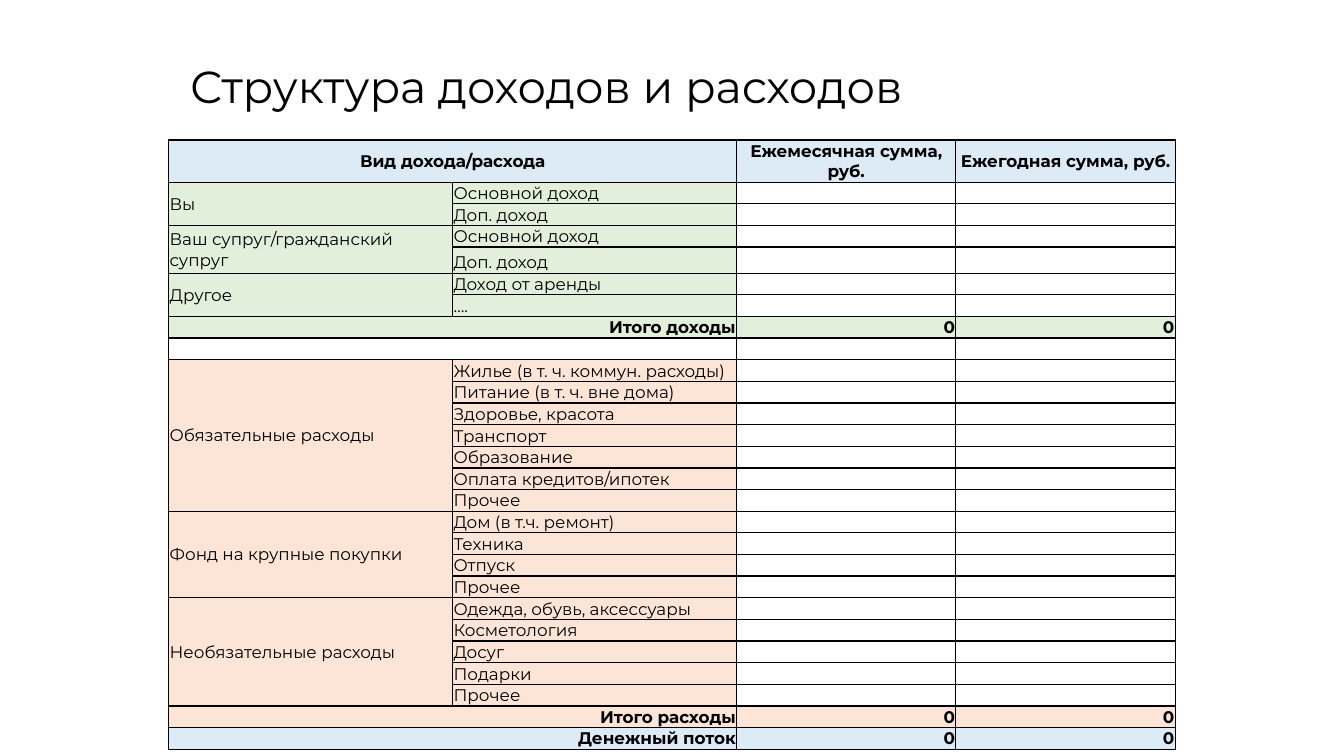
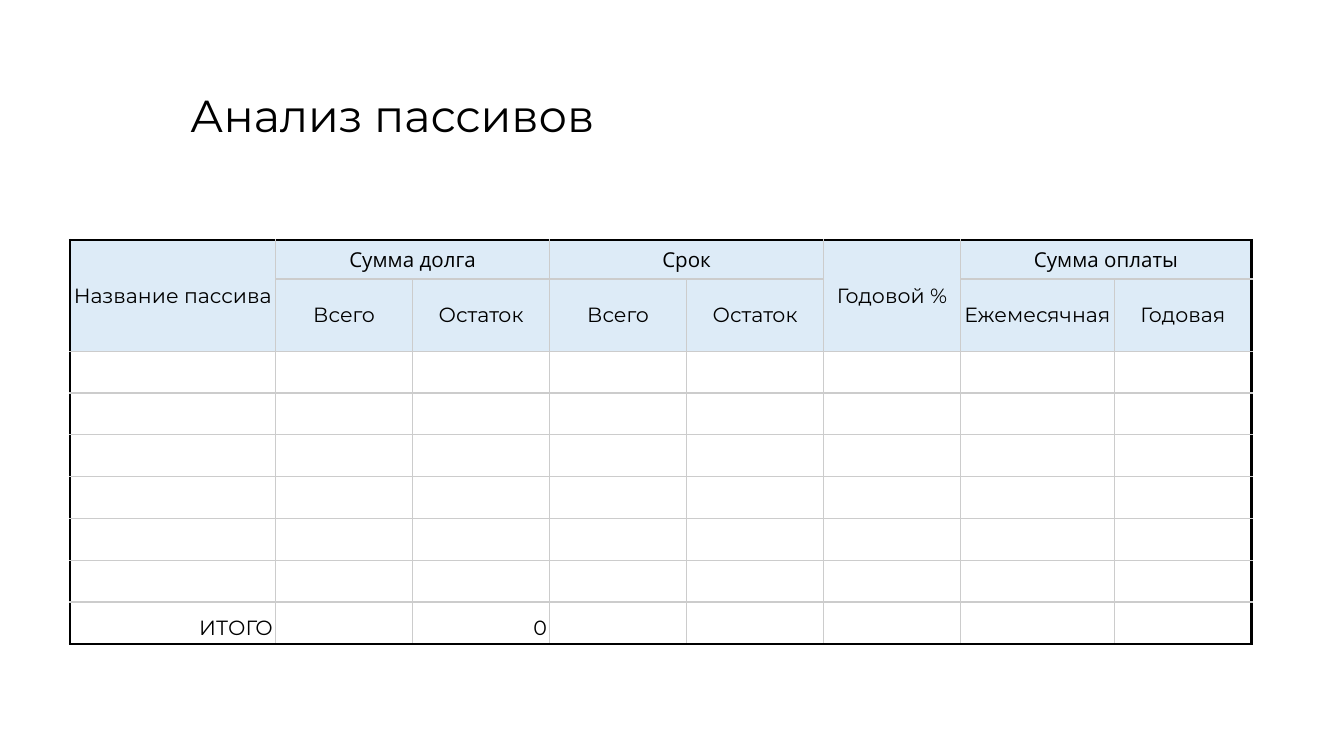
"""Build two slides with tables for household income, expenses and liabilities."""
import dataclasses
import itertools

import lxml.etree
import pptx
import pptx.dml.color
import pptx.enum.text
import pptx.oxml.ns
import pptx.slide
import pptx.table
import pptx.text.text
import pptx.util

Pt = pptx.util.Pt
qn = pptx.oxml.ns.qn
Align = pptx.enum.text.PP_ALIGN
Anchor = pptx.enum.text.MSO_ANCHOR

COLORS = {
    "text": "000000",
    "frame": "000000",
    "grid": "CCCCCC",
    "header": "DDEBF7",
    "income": "E2EFDA",
    "expense": "FCE4D6",
}
FONT = "Montserrat"
HEADER_FONT = "Open Sans"

INCOME = {
    "Вы": ["Основной доход", "Доп. доход"],
    "Ваш супруг/гражданский супруг": ["Основной доход", "Доп. доход"],
    "Другое": ["Доход от аренды", "…."],
}
EXPENSES = {
    "Обязательные расходы": [
        "Жилье (в т. ч. коммун. расходы)", "Питание (в т. ч. вне дома)",
        "Здоровье, красота", "Транспорт", "Образование",
        "Оплата кредитов/ипотек", "Прочее",
    ],
    "Фонд на крупные покупки": ["Дом (в т.ч. ремонт)", "Техника", "Отпуск", "Прочее"],
    "Необязательные расходы": [
        "Одежда, обувь, аксессуары", "Косметология", "Досуг", "Подарки", "Прочее",
    ],
}


@dataclasses.dataclass(frozen=True)
class Entry:
    """A filled cell and the rows and columns it covers."""
    row: int
    column: int
    text: str = ""
    fill: str | None = None
    rows: int = 1
    columns: int = 1
    align: Align = Align.LEFT
    anchor: Anchor = Anchor.MIDDLE
    bold: bool = False
    font: str = FONT


@dataclasses.dataclass(frozen=True)
class Grid:
    """Place, measures and line style of a table."""
    left: float
    top: float
    widths: list[float]
    heights: list[float]
    size: float
    margins: tuple[float, float, float, float]
    inner: tuple[str, float]
    outer: tuple[str, float]


def write_text(frame: pptx.text.text.TextFrame, text: str, *, size: float,
               font: str = FONT, bold: bool = False, align: Align = Align.LEFT,
               spacing: float | None = None) -> None:
    """Put one formatted paragraph into a text frame."""
    para = frame.paragraphs[0]
    para.alignment = align
    para.line_spacing = spacing
    if not text:
        lxml.etree.SubElement(para._p, qn("a:endParaRPr"), sz=str(int(size * 100)))
        return
    span = para.add_run()
    span.text = text
    span.font.size = Pt(size)
    span.font.name = font
    span.font.bold = bold
    span.font.color.rgb = pptx.dml.color.RGBColor.from_string(COLORS["text"])


def set_border(cell: pptx.table._Cell, side: str, color: str, width: float) -> None:
    """Draw one side of a cell."""
    line = lxml.etree.SubElement(
        cell._tc.get_or_add_tcPr(), qn(f"a:ln{side}"), w=str(Pt(width)))
    fill = lxml.etree.SubElement(line, qn("a:solidFill"))
    lxml.etree.SubElement(fill, qn("a:srgbClr"), val=COLORS[color])


def add_title_page(deck: pptx.presentation.Presentation, title: str,
                   top: float, width: float) -> pptx.slide.Slide:
    """Add a page with its title placed and formatted."""
    page = deck.slides.add_slide(deck.slide_layouts[5])
    box = page.shapes.title
    box.left, box.top, box.width, box.height = Pt(96.5), Pt(top), Pt(width), Pt(44.6)
    frame = box.text_frame
    frame.word_wrap = True
    frame.auto_size = pptx.enum.text.MSO_AUTO_SIZE.NONE
    frame.vertical_anchor = Anchor.MIDDLE
    frame.margin_left = frame.margin_right = Pt(5.4)
    frame.margin_top = frame.margin_bottom = Pt(2.7)
    write_text(frame, title, size=24, spacing=0.9)
    return page


def add_grid(page: pptx.slide.Slide, grid: Grid, entries: list[Entry]) -> None:
    """Draw a table from its grid and its filled cells."""
    row_count, column_count = len(grid.heights), len(grid.widths)
    table = page.shapes.add_table(
        row_count, column_count, Pt(grid.left), Pt(grid.top),
        Pt(sum(grid.widths)), Pt(sum(grid.heights))).table
    table.first_row = table.horz_banding = False
    for column, width in zip(table.columns, grid.widths):
        column.width = Pt(width)
    for row, height in zip(table.rows, grid.heights):
        row.height = Pt(height)
    filled = {(entry.row, entry.column): entry for entry in entries}
    for row, column in itertools.product(range(row_count), range(column_count)):
        entry = filled.get((row, column), Entry(row, column))
        cell = table.cell(row, column)
        end_row, end_column = row + entry.rows, column + entry.columns
        if entry.rows * entry.columns > 1:
            cell.merge(table.cell(end_row - 1, end_column - 1))
        edges = {"L": column == 0, "R": end_column == column_count,
                 "T": row == 0, "B": end_row == row_count}
        for side, outside in edges.items():
            set_border(cell, side, *(grid.outer if outside else grid.inner))
        if entry.fill:
            cell.fill.solid()
            cell.fill.fore_color.rgb = pptx.dml.color.RGBColor.from_string(
                COLORS[entry.fill])
        else:
            cell.fill.background()
        cell.margin_left, cell.margin_top, cell.margin_right, cell.margin_bottom = map(
            Pt, grid.margins)
        cell.vertical_anchor = entry.anchor
        write_text(cell.text_frame, entry.text, size=grid.size, font=entry.font,
                   bold=entry.bold, align=entry.align)


def group_entries(groups: dict[str, list[str]], start: int, fill: str) -> list[Entry]:
    """List the cells of groups whose names span their items."""
    entries = []
    row = start
    for name, items in groups.items():
        entries.append(Entry(row, 0, name, fill, rows=len(items)))
        entries += [Entry(row + offset, 1, item, fill, anchor=Anchor.BOTTOM)
                    for offset, item in enumerate(items)]
        row += len(items)
    return entries


def total_entries(row: int, label: str, fill: str) -> list[Entry]:
    """List the cells of a total row."""
    return [Entry(row, column, text, fill, columns=columns, align=Align.RIGHT,
                  anchor=Anchor.BOTTOM, bold=True)
            for column, text, columns in [(0, label, 2), (2, "0", 1), (3, "0", 1)]]


def add_budget_page(deck: pptx.presentation.Presentation) -> None:
    """Add the page of income and expenses."""
    page = add_title_page(deck, "Структура доходов и расходов", 25.2, 416)
    income_total = 1 + sum(map(len, INCOME.values()))
    expense_start = income_total + 2
    expense_total = expense_start + sum(map(len, EXPENSES.values()))
    headings = [(0, "Вид дохода/расхода", 2), (2, "Ежемесячная сумма, руб.", 1),
                (3, "Ежегодная сумма, руб.", 1)]
    entries = [Entry(0, column, text, "header", columns=columns,
                     align=Align.CENTER, bold=True)
               for column, text, columns in headings]
    entries += group_entries(INCOME, 1, "income")
    entries += total_entries(income_total, "Итого доходы", "income")
    entries.append(Entry(income_total + 1, 0, columns=2))
    entries += group_entries(EXPENSES, expense_start, "expense")
    entries += total_entries(expense_total, "Итого расходы", "expense")
    entries += total_entries(expense_total + 1, "Денежный поток", "header")
    heights = [22.5] + [11.6] * 3 + [14] + [11.6] * (expense_total - 3)
    line = ("frame", 0.75)
    add_grid(page, Grid(90.4, 75, [152.1, 152.1, 117.5, 117.5], heights, 9,
                        (0.5, 0.5, 0.5, 0), line, line), entries)


def add_liabilities_page(deck: pptx.presentation.Presentation) -> None:
    """Add the page of liabilities."""
    page = add_title_page(deck, "Анализ пассивов", 41, 484.6)
    entries = [Entry(0, column, text, "header", rows=2, align=Align.CENTER)
               for column, text in [(0, "Название пассива"), (5, "Годовой %")]]
    pairs = [(1, "Сумма долга", ("Всего", "Остаток")),
             (3, "Срок", ("Всего", "Остаток")),
             (6, "Сумма оплаты", ("Ежемесячная", "Годовая"))]
    for column, heading, parts in pairs:
        entries.append(Entry(0, column, heading, "header", columns=2,
                             align=Align.CENTER, font=HEADER_FONT))
        entries += [Entry(1, column + offset, part, "header", align=Align.CENTER)
                    for offset, part in enumerate(parts)]
    entries += [Entry(8, column, text, align=Align.RIGHT, anchor=Anchor.BOTTOM)
                for column, text in [(0, "ИТОГО"), (2, "0")]]
    widths = [110.2] + [73.4] * 5 + [82.4, 73.4]
    add_grid(page, Grid(37.5, 128.6, widths, [20.9, 38.7] + [22.4] * 7, 11,
                        (1.5, 1.5, 1.5, 1.5), ("grid", 0.75), ("frame", 1.5)), entries)


def main() -> None:
    """Build and save the deck."""
    deck = pptx.Presentation()
    deck.slide_width, deck.slide_height = Pt(720), Pt(405)
    add_budget_page(deck)
    add_liabilities_page(deck)
    deck.save("out.pptx")


if __name__ == "__main__":
    main()
